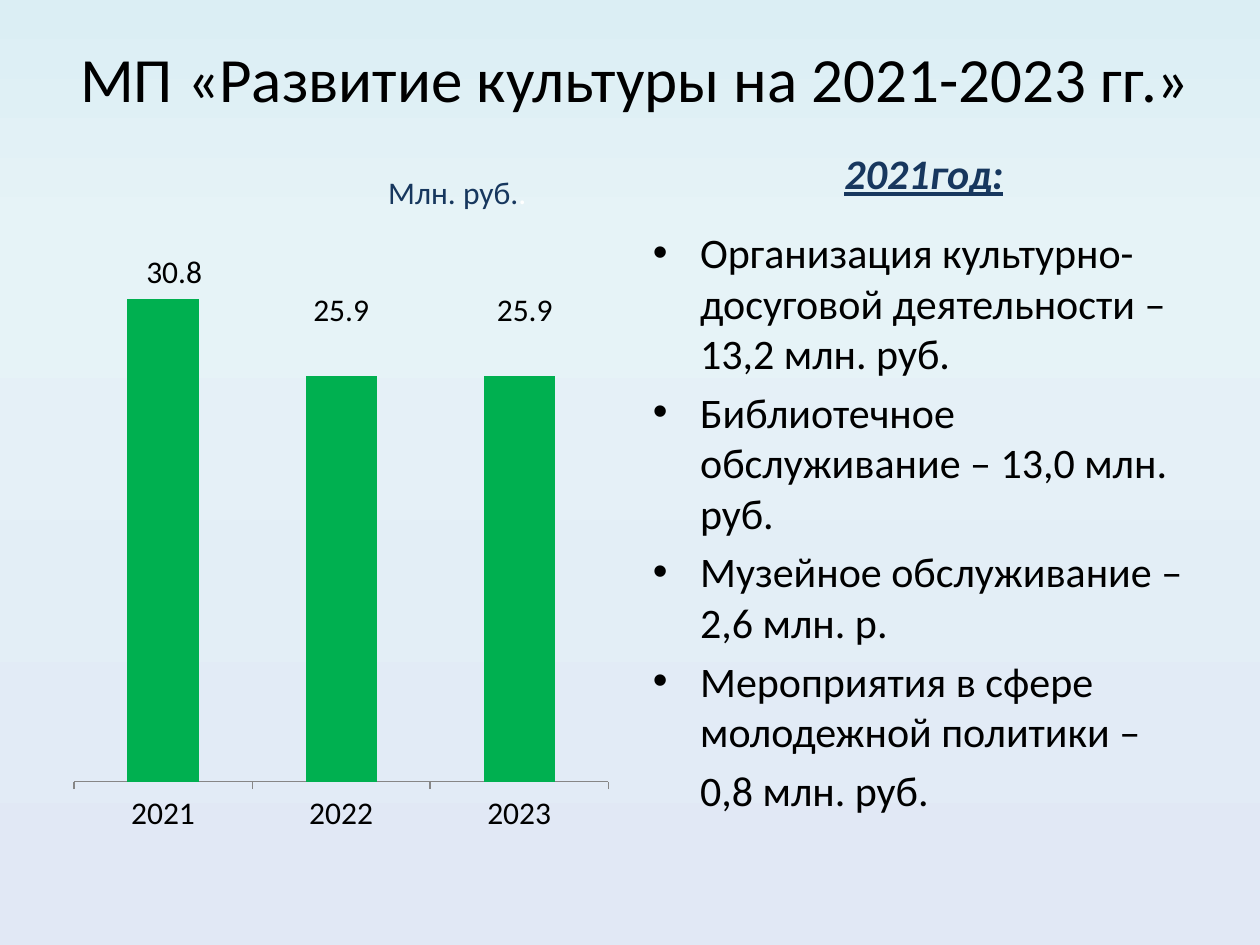
from copy import deepcopy

from lxml import etree
from pptx import Presentation
from pptx.chart.data import CategoryChartData
from pptx.dml.color import RGBColor
from pptx.enum.chart import XL_CHART_TYPE as ChartType, XL_TICK_MARK as Tick
from pptx.enum.text import MSO_ANCHOR as Anchor, PP_ALIGN as Align
from pptx.oxml import parse_xml
from pptx.oxml.ns import nsdecls, qn
from pptx.util import Pt

FONT = "Calibri"
NAVY = "17375E"


def rgb(value):
    return RGBColor.from_string(value)


def add_text(box, lines, size, color="000000", align=Align.CENTER, anchor=Anchor.MIDDLE):
    """Add a wrapped text box at (left, top, width, height) points and return its frame."""
    frame = slide.shapes.add_textbox(*map(Pt, box)).text_frame
    frame.word_wrap = True
    frame.vertical_anchor = anchor
    frame.text = "\n".join(lines)
    for paragraph in frame.paragraphs:
        paragraph.alignment = align
        font = paragraph.runs[0].font
        font.name, font.size, font.color.rgb = FONT, Pt(size), rgb(color)
    return frame


deck = Presentation()
deck.slide_width, deck.slide_height = Pt(720), Pt(540)
slide = deck.slides.add_slide(deck.slide_layouts[6])

# Background gradient, top to bottom
backdrop = slide.background.fill
backdrop.gradient()
backdrop.gradient_angle = 270
stop_list = slide.element.find(".//" + qn("a:gsLst"))
stop_list.append(deepcopy(stop_list[-1]))
for stop, (position, color) in zip(
    backdrop.gradient_stops, [(0, "DBEEF4"), (0.25, "E6F3F7"), (1, "E1E8F5")]
):
    stop.position, stop.color.rgb = position, rgb(color)

add_text((18, 21.6, 690, 44.6), ["МП «Развитие культуры на 2021-2023 гг.»"], 36)

# Budget by year
budget = CategoryChartData()
budget.categories = ["2021", "2022", "2023"]
budget.add_series("Series 1", [30.8, 25.9, 25.9])
chart = slide.shapes.add_chart(
    ChartType.COLUMN_STACKED, Pt(36), Pt(126), Pt(318), Pt(356.4), budget
).chart
chart.has_legend = chart.has_title = False
chart.font.name, chart.font.size, chart.font.color.rgb = FONT, Pt(18), rgb("000000")

years = chart.category_axis
years.major_tick_mark = Tick.OUTSIDE
years.has_major_gridlines = False
years.format.line.color.rgb = rgb("868686")
amounts = chart.value_axis
amounts.minimum_scale, amounts.maximum_scale = 0, 35
amounts.has_major_gridlines = amounts.visible = False

plot = chart.plots[0]
plot.gap_width, plot.overlap, plot.vary_by_categories = 150, 100, False
columns = plot.series[0]
columns.format.fill.solid()
columns.format.fill.fore_color.rgb = rgb("00B050")
columns.data_labels.show_value = True

# Each label is moved from the middle of its column to above it, without leader lines
label_list = columns.data_labels._element
for leader_lines in label_list.findall(qn("c:showLeaderLines")):
    leader_lines.set("val", "0")
for index, dx in enumerate([0.02, 0, 0.01]):
    label_list.insert(index, parse_xml(
        f'<c:dLbl {nsdecls("c")}><c:idx val="{index}"/><c:layout><c:manualLayout>'
        f'<c:x val="{dx}"/><c:y val="-0.43"/></c:manualLayout></c:layout>'
        '<c:showLegendKey val="0"/><c:showVal val="1"/><c:showCatName val="0"/>'
        '<c:showSerName val="0"/><c:showPercent val="0"/><c:showBubbleSize val="0"/></c:dLbl>'
    ))

plot_area = chart.element.find(".//" + qn("c:plotArea"))
for old_layout in plot_area.findall(qn("c:layout")):
    plot_area.remove(old_layout)
plot_area.insert(0, parse_xml(
    f'<c:layout {nsdecls("c")}><c:manualLayout><c:layoutTarget val="inner"/>'
    '<c:xMode val="edge"/><c:yMode val="edge"/><c:x val="0.02"/><c:y val="0.02"/>'
    '<c:w val="0.96"/><c:h val="0.88"/></c:manualLayout></c:layout>'
))

# Spending items of 2021
items = add_text((366, 126, 318, 356.4), [
    "Организация культурно-досуговой деятельности – 13,2 млн. руб.",
    "Библиотечное обслуживание – 13,0 млн. руб.",
    "Музейное обслуживание – 2,6 млн. р.",
    "Мероприятия в сфере молодежной политики –",
    "0,8 млн. руб.",
], 24, align=Align.LEFT, anchor=Anchor.TOP)
for item in items.paragraphs:
    item.space_before = Pt(4.8)
    properties = item._p.get_or_add_pPr()
    properties.set("marL", str(Pt(27)))
    if item.text.startswith("0,8"):
        properties.set("indent", "0")
    else:
        properties.set("indent", str(-Pt(27)))
        etree.SubElement(properties, qn("a:buFont")).set("typeface", "Arial")
        etree.SubElement(properties, qn("a:buChar")).set("char", "•")

heading = add_text((468, 77.8, 120, 41.8), ["2021год:"], 24, NAVY)
heading_font = heading.paragraphs[0].runs[0].font
heading_font.bold = heading_font.italic = heading_font.underline = True

unit = add_text((210.2, 99.4, 102.2, 20.9), ["Млн. руб."], 18, NAVY)
last_dot = unit.paragraphs[0].add_run()
last_dot.text = "."
last_dot.font.name, last_dot.font.size = FONT, Pt(18)
last_dot.font.color.rgb = rgb("FFFFFF")

deck.save("out.pptx")
